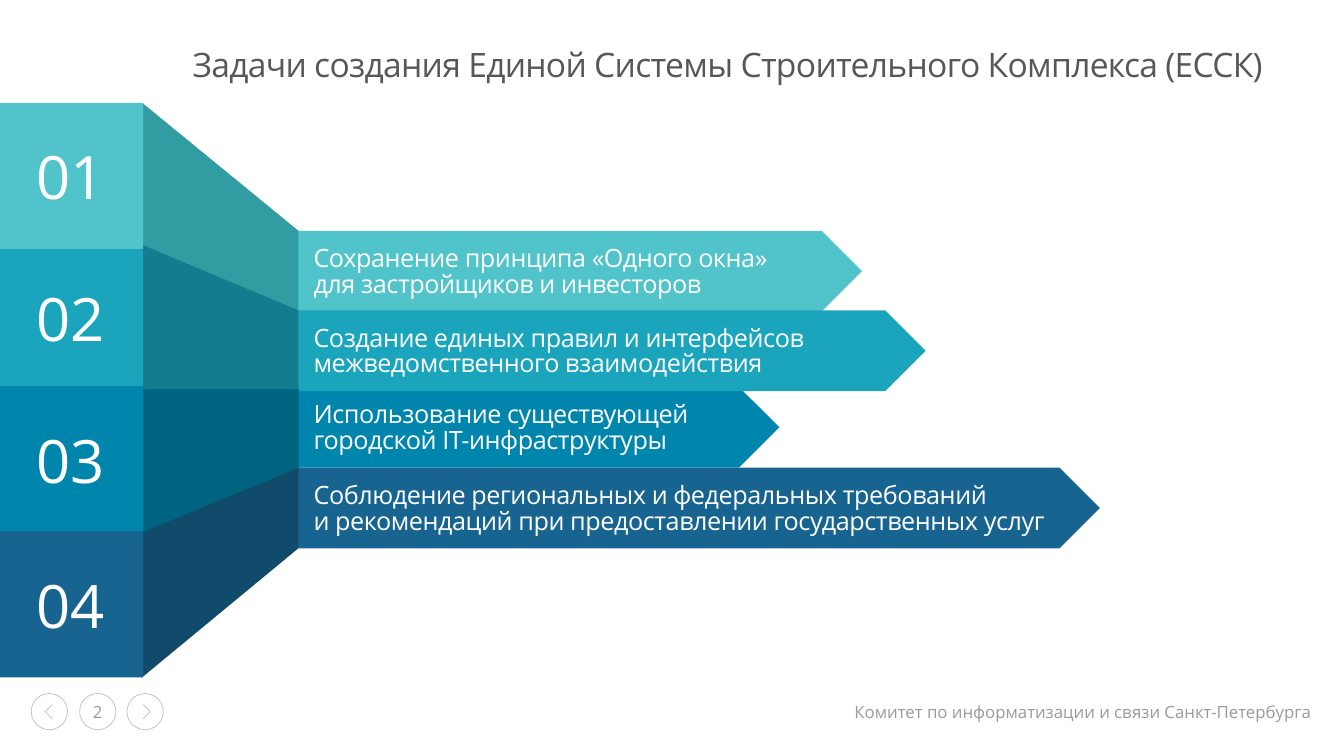
from dataclasses import dataclass

from pptx import Presentation
from pptx.dml.color import RGBColor
from pptx.enum.shapes import MSO_SHAPE
from pptx.enum.text import MSO_ANCHOR, PP_ALIGN
from pptx.util import Inches, Pt


@dataclass(frozen=True)
class Theme:
    """Colours, font and type sizes of the slide."""
    font: str = "Open Sans"
    white: str = "FFFFFF"
    title: str = "57565A"
    footer: str = "9A9A9B"
    outline: str = "BFBFBF"
    title_size: float = 24
    number_size: float = 42.7
    task_size: float = 18
    footer_size: float = 12


@dataclass(frozen=True)
class Task:
    """One numbered task with its tile, facet and arrow."""
    number: str
    text: str
    color: str
    facet_color: str
    tile_top: float
    arrow_top: float
    arrow_width: float
    text_width: float


THEME = Theme()
TILE_LEFT, TILE_WIDTH, TILE_HEIGHT = -0.02, 1.44, 1.45
ARROW_LEFT, ARROW_HEIGHT = 2.95, 0.8
FACET_LEFT, FACET_RIGHT, FACET_MIDDLE = 1.41, 2.96, 3.86
BUTTON_TOP, BUTTON_SIZE = 6.88, 0.36

FIRST = Task("01", "Сохранение принципа «Одного окна»\vдля застройщиков и инвесторов",
             "51C3CA", "329CA3", 1.02, 2.29, 5.6, 7.97)
SECOND = Task("02", "Создание единых правил и интерфейсов межведомственного взаимодействия",
              "1AA5BD", "137C8E", 2.43, 3.08, 6.23, 6.07)
THIRD = Task("03", "Использование существующей\vгородской IT-инфраструктуры",
             "0086AC", "006481", 3.83, 3.84, 4.78, 7.16)
FOURTH = Task("04", "Соблюдение региональных и федеральных требований\v"
              "и рекомендаций при предоставлении государственных услуг",
              "176490", "114B6C", 5.27, 4.64, 7.96, 7.45)


def paint(shape, fill=None, line=None):
    """Set fill and outline and remove the shadow."""
    shape.shadow.inherit = False
    if fill:
        shape.fill.solid()
        shape.fill.fore_color.rgb = RGBColor.from_string(fill)
    else:
        shape.fill.background()
    if line:
        shape.line.color.rgb = RGBColor.from_string(line)
        shape.line.width = Pt(0.5)
    else:
        shape.line.fill.background()


def write(shape, text, size, color, align=PP_ALIGN.CENTER, anchor=MSO_ANCHOR.MIDDLE,
          insets=(0, 0), line_spacing=None, tracking=None):
    """Put one styled paragraph into a shape."""
    frame = shape.text_frame
    frame.word_wrap = True
    frame.vertical_anchor = anchor
    frame.margin_left = frame.margin_right = Inches(insets[0])
    frame.margin_top = frame.margin_bottom = Inches(insets[1])
    para = frame.paragraphs[0]
    para.text = text
    para.alignment = align
    para.line_spacing = line_spacing
    for span in para.runs:
        span.font.name = THEME.font
        span.font.size = Pt(size)
        span.font.color.rgb = RGBColor.from_string(color)
        if tracking:
            span._r.get_or_add_rPr().set("spc", str(int(tracking * 100)))


def add_box(page, left, top, width, height):
    """Add an empty text box."""
    return page.shapes.add_textbox(Inches(left), Inches(top), Inches(width), Inches(height))


def add_block(page, kind, left, top, width, height, fill=None, line=None):
    """Add a painted preset shape."""
    block = page.shapes.add_shape(kind, Inches(left), Inches(top), Inches(width), Inches(height))
    paint(block, fill, line)
    return block


def add_outline(page, points, fill=None, line=None):
    """Add a freeform through the points, closed when filled."""
    corners = [(Inches(x), Inches(y)) for x, y in points]
    builder = page.shapes.build_freeform(*corners[0])
    builder.add_line_segments(corners[1:], close=bool(fill))
    paint(builder.convert_to_shape(), fill, line)


def add_arrow(page, task):
    """Add the arrow of a task."""
    add_block(page, MSO_SHAPE.PENTAGON, ARROW_LEFT, task.arrow_top,
              task.arrow_width, ARROW_HEIGHT, task.color)


def add_facet(page, task, lower):
    """Add the slanted face between a tile and its arrow."""
    tile_edge = task.tile_top + TILE_HEIGHT * lower
    arrow_edge = task.arrow_top + ARROW_HEIGHT * lower
    add_outline(page, [(FACET_RIGHT, arrow_edge), (FACET_LEFT, tile_edge),
                       (FACET_LEFT, FACET_MIDDLE), (FACET_RIGHT, FACET_MIDDLE)],
                task.facet_color)


def add_tile(page, task):
    """Add the numbered tile of a task."""
    tile = add_block(page, MSO_SHAPE.RECTANGLE, TILE_LEFT, task.tile_top,
                     TILE_WIDTH, TILE_HEIGHT, task.color)
    write(tile, task.number, THEME.number_size, THEME.white, insets=(0.1, 0.05))


def add_task_text(page, task):
    """Add the wording that lies on an arrow."""
    box = add_box(page, 3.11, task.arrow_top + 0.11, task.text_width, 0.62)
    write(box, task.text, THEME.task_size, THEME.white, PP_ALIGN.LEFT, MSO_ANCHOR.TOP,
          (0, 0.05), 0.85, -0.3)


def add_button(page, left):
    """Add a round navigation button."""
    return add_block(page, MSO_SHAPE.OVAL, left, BUTTON_TOP, BUTTON_SIZE, BUTTON_SIZE,
                     line=THEME.outline)


def add_chevron(page, tip, back):
    """Add a navigation chevron from its tip and back positions."""
    middle = BUTTON_TOP + BUTTON_SIZE / 2
    add_outline(page, [(back, middle - 0.07), (tip, middle), (back, middle + 0.07)],
                line=THEME.outline)


def add_footer(page):
    """Add the department name, page number and navigation."""
    box = add_box(page, 8.23, 6.89, 4.91, 0.34)
    write(box, "Комитет по информатизации и связи Санкт-Петербурга",
          THEME.footer_size, THEME.footer, PP_ALIGN.RIGHT, insets=(0.13, 0.07))
    write(add_button(page, 0.79), "2", THEME.footer_size, THEME.footer)
    for left, tip, back in ((0.31, 0.45, 0.52), (1.26, 1.49, 1.42)):
        add_button(page, left)
        add_chevron(page, tip, back)


def main():
    """Build and save the slide."""
    deck = Presentation()
    deck.slide_width, deck.slide_height = Inches(13.33), Inches(7.5)
    page = deck.slides.add_slide(deck.slide_layouts[6])
    add_footer(page)
    write(add_box(page, 1.55, 0.22, 11.33, 0.89),
          "Задачи создания Единой Системы Строительного Комплекса (ЕССК)",
          THEME.title_size, THEME.title, line_spacing=0.86, tracking=-0.5)
    for task in (THIRD, FIRST, SECOND, FOURTH):
        add_arrow(page, task)
    for task, lower in ((FIRST, False), (SECOND, False), (FOURTH, True), (THIRD, True)):
        add_facet(page, task, lower)
    for task in (SECOND, THIRD, FOURTH, FIRST):
        add_tile(page, task)
    for task in (FIRST, SECOND, THIRD, FOURTH):
        add_task_text(page, task)
    deck.save("out.pptx")


if __name__ == "__main__":
    main()
